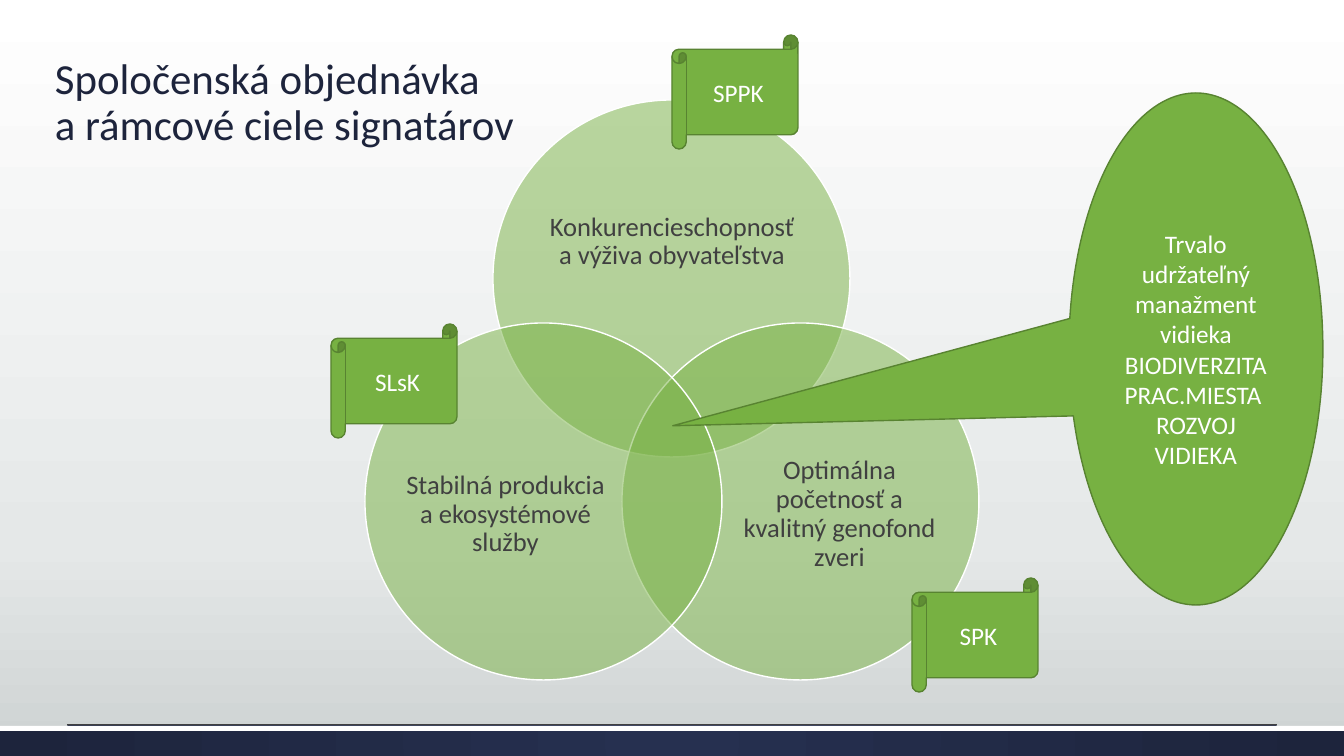
from lxml import etree
from pptx import Presentation
from pptx import util as u
from pptx.dml.color import RGBColor
from pptx.enum import shapes, text
from pptx.oxml import ns, parse_xml

PX = 914400 / 100.8
FONT = "Calibri"
COLORS = {
    "navy": "1D243C", "navy_light": "263050", "white": "FFFFFF",
    "mist": "E5E8E8", "silver": "CDD2D2", "green": "77B142",
    "green_dark": "588331", "ink": "404040",
}
CIRCLE = 357
GOALS = [
    ((493, 100), (48, 62, 262, 160), "Konkurencieschopnosť a výživa obyvateľstva"),
    ((622, 323), (110, 93, 215, 197), "Optimálna početnosť a kvalitný genofond zveri"),
    ((365, 323), (33, 93, 215, 197), "Stabilná produkcia a ekosystémové služby"),
]
SIGNATORIES = [((672, 35), "SPPK"), ((331, 324), "SLsK"), ((912, 578), "SPK")]
COUNTRYSIDE = ["Trvalo udržateľný manažment vidieka", "BIODIVERZITA",
               "PRAC.MIESTA ", "ROZVOJ VIDIEKA"]


def px(*lengths):
    """Turn pixel lengths into EMU."""
    return [u.Emu(round(length * PX)) for length in lengths]


def color(name):
    """Look up a palette colour."""
    return RGBColor.from_string(COLORS[name])


def set_gradient(owner, stops, direction):
    """Replace the gradient fill inside an element."""
    stop_xml = "".join(
        f'<a:gs pos="{at * 1000}"><a:srgbClr val="{COLORS[name]}"/></a:gs>'
        for at, name in stops)
    current = owner.find(".//" + ns.qn("a:gradFill"))
    current.getparent().replace(current, parse_xml(
        f'<a:gradFill {ns.nsdecls("a")} rotWithShape="1">'
        f"<a:gsLst>{stop_xml}</a:gsLst>{direction}</a:gradFill>"))


def add_figure(slide, kind, box, fill, line=None):
    """Add a flat preset shape."""
    figure = slide.shapes.add_shape(kind, *px(*box))
    figure.shadow.inherit = False
    figure.fill.solid()
    figure.fill.fore_color.rgb = color(fill)
    if line:
        figure.line.color.rgb = color(line)
        figure.line.width = u.Pt(1)
    else:
        figure.line.fill.background()
    return figure


def write(frame, lines, size, ink, align=text.PP_ALIGN.CENTER, spacing=None,
          anchor=text.MSO_ANCHOR.MIDDLE):
    """Fill a text frame with one paragraph per line."""
    frame.word_wrap = True
    frame.vertical_anchor = anchor
    frame.text = "\n".join(lines)
    for paragraph in frame.paragraphs:
        paragraph.alignment = align
        paragraph.line_spacing = spacing
        paragraph.font.name = FONT
        paragraph.font.size = u.Pt(size)
        paragraph.font.color.rgb = color(ink)


def draw_backdrop(slide, box):
    """Draw the background gradient and the footer band."""
    left, top, width, height = box
    slide.background.fill.gradient()
    set_gradient(slide.element, [(0, "white"), (72, "mist"), (100, "silver")],
                 '<a:lin ang="5400000" scaled="0"/>')
    band = add_figure(slide, shapes.MSO_SHAPE.RECTANGLE, box, "navy")
    band.fill.gradient()
    set_gradient(band.element, [(0, "navy_light"), (100, "navy")],
                 '<a:path path="circle"><a:fillToRect l="50000" t="50000" '
                 'r="50000" b="50000"/></a:path>')
    add_figure(slide, shapes.MSO_SHAPE.RECTANGLE, (left, top, width, 5), "white")
    rule = slide.shapes.add_connector(
        shapes.MSO_CONNECTOR.STRAIGHT,
        *px(left + 67, top - 1, left + width - 67, top - 1))
    rule.line.color.rgb = color("ink")
    rule.line.width = u.Pt(0.75)
    etree.SubElement(rule.element.spPr, ns.qn("a:effectLst"))


def draw_goal(slide, box, label_box, goal):
    """Draw one translucent circle of the Venn diagram with its label."""
    circle = add_figure(slide, shapes.MSO_SHAPE.OVAL, box, "green", "white")
    tint = circle.element.spPr.find(ns.qn("a:solidFill"))[0]
    etree.SubElement(tint, ns.qn("a:alpha")).set("val", "50000")
    dx, dy, width, height = label_box
    label = slide.shapes.add_textbox(*px(box[0] + dx, box[1] + dy, width, height))
    frame = label.text_frame
    frame.margin_left = frame.margin_right = frame.margin_top = frame.margin_bottom = 0
    write(frame, [goal], 19, "ink", spacing=0.9)


def draw_title(slide, box):
    """Write the two-line heading."""
    heading = slide.shapes.add_textbox(*px(*box))
    frame = heading.text_frame
    write(frame, ["Spoločenská objednávka"], 30.6, "navy", text.PP_ALIGN.LEFT, 0.9,
          text.MSO_ANCHOR.BOTTOM)
    frame.paragraphs[0].add_line_break()
    frame.paragraphs[0].add_run().text = "a rámcové ciele signatárov"


def draw_countryside(slide, box):
    """Draw the callout that points at the shared centre."""
    callout = add_figure(slide, shapes.MSO_SHAPE.OVAL_CALLOUT, box, "green", "green_dark")
    callout.adjustments[0] = -2.06
    callout.adjustments[1] = 0.15
    write(callout.text_frame, COUNTRYSIDE, 18, "white")


def draw_signatory(slide, box, name):
    """Draw the scroll of one signatory."""
    scroll = add_figure(slide, shapes.MSO_SHAPE.HORIZONTAL_SCROLL, box, "green", "green_dark")
    write(scroll.text_frame, [name], 18, "white")


def main():
    """Build and save the slide."""
    deck = Presentation()
    deck.slide_width, deck.slide_height = px(1344, 756)
    slide = deck.slides.add_slide(deck.slide_layouts[6])
    draw_backdrop(slide, (0, 726, 1344, 30))
    for corner, label_box, goal in GOALS:
        draw_goal(slide, (*corner, CIRCLE, CIRCLE), label_box, goal)
    draw_title(slide, (45, 51, 1151, 104))
    draw_countryside(slide, (1069, 93, 254, 512))
    for corner, name in SIGNATORIES:
        draw_signatory(slide, (*corner, 126, 114), name)
    deck.save("out.pptx")


if __name__ == "__main__":
    main()
